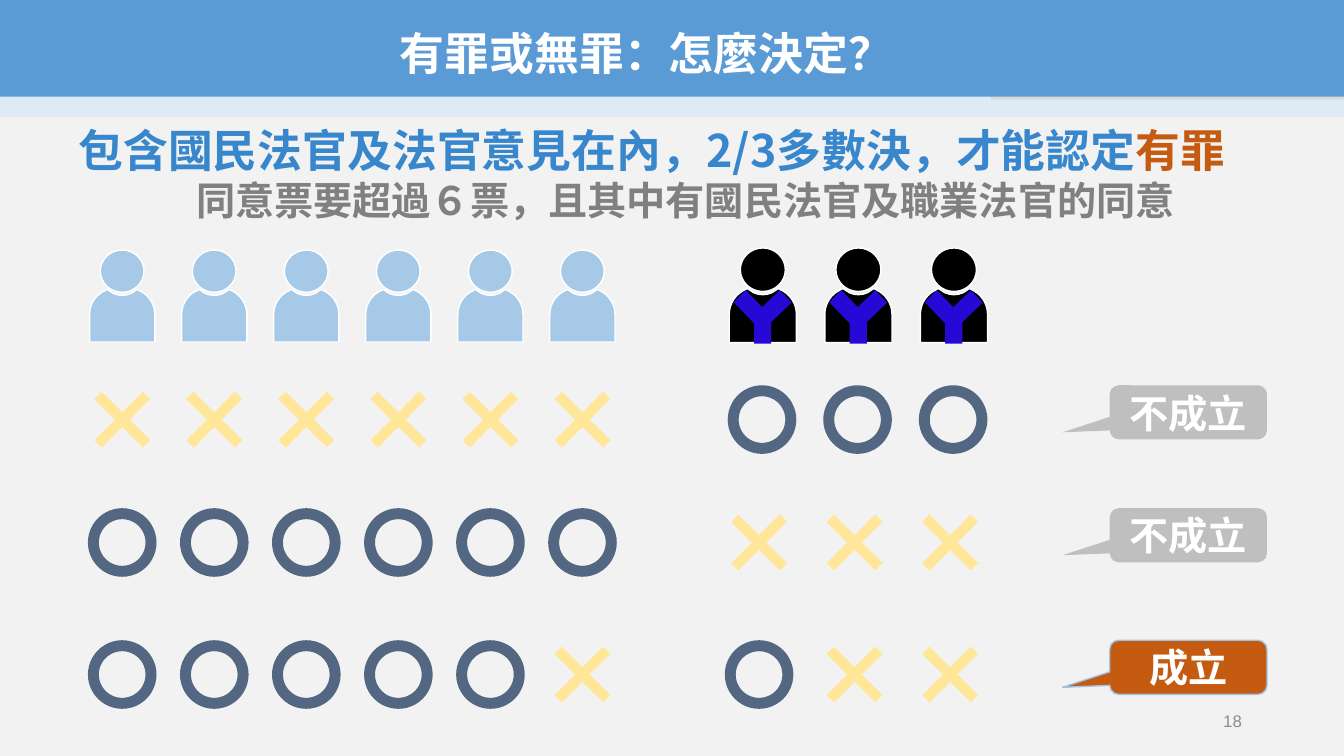
from lxml.etree import SubElement
from pptx import Presentation
from pptx.dml.color import RGBColor
from pptx.enum.shapes import MSO_SHAPE as Shape
from pptx.enum.text import MSO_ANCHOR as Anchor, PP_ALIGN as Align
from pptx.oxml.ns import qn
from pptx.util import Pt

COLORS = {
    "page": "F2F2F2", "banner": "5B9BD5", "band": "DEEBF7", "strip": "D9D9D9",
    "white": "FFFFFF", "juror": "A6C9E8", "judge": "000000", "sash": "2609D5",
    "agree": "546782", "against": "FFE699", "rejected": "BFBFBF",
    "guilty": "C55A11", "guilty_line": "9DC3E6", "rule": "3886CC",
    "detail": "808080", "number": "8C8C8C",
}
CJK = "Noto Sans CJK SC"
MARK_SIZE = 49
JUROR_X, JUROR_STEP = 87.3, 65.75
JUDGE_X, JUDGE_STEP = 544.9, 68.25

# Top, juror votes, judge votes, first judge mark's centre, verdict, guilty
VOTES = [
    (275.2, "XXXXXX", "OOO", 544.3, "不成立", False),
    (363, "OOOOOO", "XXX", 542.2, "不成立", False),
    (457.3, "OOOOOX", "OXX", 542.2, "成立", True),
]

# Outlines around the centre of the top edge; a segment of one point is
# straight, a segment of three points is a Bezier curve
BODY = [[(-6.4, 31)], [(-2.2, 32.9), (2.2, 32.9), (6.4, 31)], [(10.8, 28.1)],
        [(11.9, 28.8)], [(18.5, 31.6), (23.3, 38.2), (23.3, 46.1)],
        [(23.3, 65.7)], [(-23.3, 65.7)], [(-23.3, 46.1)],
        [(-23.3, 38.2), (-18.5, 31.6), (-11.9, 28.8)], [(-10.8, 28.1)]]
HEAD = [[(0, 0)], [(8.6, 0), (15.6, 6.8), (15.6, 15.1)],
        [(15.6, 23.4), (8.6, 30.2), (0, 30.2)],
        [(-8.6, 30.2), (-15.6, 23.4), (-15.6, 15.1)],
        [(-15.6, 6.8), (-8.6, 0), (0, 0)]]
SASH = [[(-12.2, 30.2)], [(-0.5, 42.3)], [(12.2, 30.2)], [(20.4, 39.2)],
        [(6, 53)], [(6, 68.4)], [(-6.2, 68.4)], [(-6.2, 54)], [(-20.8, 38.8)]]


def rgb(name):
    return RGBColor.from_string(COLORS[name])


def paint(shape, fill, line=None):
    shape.shadow.inherit = False
    shape.fill.solid()
    shape.fill.fore_color.rgb = rgb(fill)
    if line:
        shape.line.color.rgb = rgb(line)
        shape.line.width = Pt(1)
    else:
        shape.line.fill.background()


def add_preset(page, kind, left, top, width, height, fill, line=None, adjust=()):
    shape = page.shapes.add_shape(kind, Pt(left), Pt(top), Pt(width), Pt(height))
    for index, value in enumerate(adjust):
        shape.adjustments[index] = value
    paint(shape, fill, line)
    return shape


def write(para, text, size, color, font=CJK, bold=True, align=None, indent=0):
    if align is not None:
        para.alignment = align
    if indent:
        para._p.get_or_add_pPr().set("marL", str(Pt(indent)))
    span = para.add_run()
    span.text = text
    span.font.size = Pt(size)
    span.font.bold = bold
    span.font.color.rgb = rgb(color)
    span.font.name = font
    SubElement(span._r.get_or_add_rPr(), qn("a:ea"), typeface=CJK)


def add_box(page, left, top, width, height, anchor=Anchor.TOP):
    box = page.shapes.add_textbox(Pt(left), Pt(top), Pt(width), Pt(height))
    box.text_frame.word_wrap = True
    box.text_frame.vertical_anchor = anchor
    return box.text_frame


def bend(shape, contours):
    """Join the lines of each three-point segment into one Bezier curve."""
    lines = iter(list(shape._element.iter(qn("a:lnTo"))))
    for contour in contours:
        for segment in contour[1:]:
            first, *others = [next(lines) for _ in segment]
            if others:
                first.tag = qn("a:cubicBezTo")
            for other in others:
                first.append(other[0])
                other.getparent().remove(other)


def add_outline(page, contours, center, top, fill, line=None, scale=1):
    builder = None
    for contour in contours:
        start, *points = [(Pt(center + x * scale), Pt(top + y * scale))
                          for segment in contour for x, y in segment]
        if builder is None:
            builder = page.shapes.build_freeform(*start)
        else:
            builder.move_to(*start)
        builder.add_line_segments(points, close=True)
    shape = builder.convert_to_shape()
    bend(shape, contours)
    paint(shape, fill, line)


def add_mark(page, vote, center, top):
    kind, fill, adjust = {"O": (Shape.DONUT, "agree", 0.16),
                          "X": (Shape.CROSS, "against", 0.425)}[vote]
    mark = add_preset(page, kind, center - MARK_SIZE / 2, top,
                      MARK_SIZE, MARK_SIZE, fill, adjust=[adjust])
    if vote == "X":
        mark.rotation = 314.8


def add_verdict(page, text, top, guilty):
    fill, line = ("guilty", "guilty_line") if guilty else ("rejected", None)
    callout = add_preset(page, Shape.ROUNDED_RECTANGULAR_CALLOUT, 792.7, top,
                         112.3, 38.7, fill, line, (-0.801, 0.369, 0.167))
    callout.text_frame.vertical_anchor = Anchor.MIDDLE
    write(callout.text_frame.paragraphs[0], text, 28, "white", "Arial",
          align=Align.CENTER)


def main():
    deck = Presentation()
    deck.slide_width, deck.slide_height = Pt(960), Pt(540)
    page = deck.slides.add_slide(deck.slide_layouts[6])
    page.background.fill.solid()
    page.background.fill.fore_color.rgb = rgb("page")

    # Banner and title
    add_preset(page, Shape.RECTANGLE, 0, 8.6, 960, 74.9, "band")
    add_preset(page, Shape.RECTANGLE, 708, -3.6, 252, 74.9, "strip")
    add_preset(page, Shape.RECTANGLE, 0, -3.6, 960, 72.7, "banner")
    title = add_box(page, 278.6, 15.1, 491, 46)
    write(title.paragraphs[0], "有罪或無罪：怎麼決定？", 32, "white")

    # People
    for index in range(6):
        add_outline(page, [BODY, HEAD], JUROR_X + index * JUROR_STEP, 178.6,
                    "juror", "white")
    for index in range(3):
        center = JUDGE_X + index * JUDGE_STEP
        add_outline(page, [BODY, HEAD], center, 177.1, "judge", "white", 1.03)
        add_outline(page, [SASH], center, 177.1, "sash")

    # Votes and verdicts
    for top, jurors, judges, judge_x, verdict, guilty in VOTES:
        for index, vote in enumerate(jurors):
            add_mark(page, vote, JUROR_X + index * JUROR_STEP, top)
        for index, vote in enumerate(judges):
            add_mark(page, vote, judge_x + index * JUDGE_STEP, top)
        add_verdict(page, verdict, top, guilty)

    # Decision rule
    rule = add_box(page, 49, 84.2, 877.7, 80)
    write(rule.paragraphs[0], "包含國民法官及法官意見在內，2/3多數決，才能認定", 32, "rule")
    write(rule.paragraphs[0], "有罪", 32, "guilty")
    write(rule.add_paragraph(), "同意票要超過６票，且其中有國民法官及職業法官的同意",
          28, "detail", indent=84)

    # Page number
    number = add_box(page, 678.2, 500.4, 216, 28.8, Anchor.MIDDLE)
    write(number.paragraphs[0], "18", 12, "number", "Arial", False, Align.RIGHT)

    deck.save("out.pptx")


if __name__ == "__main__":
    main()
